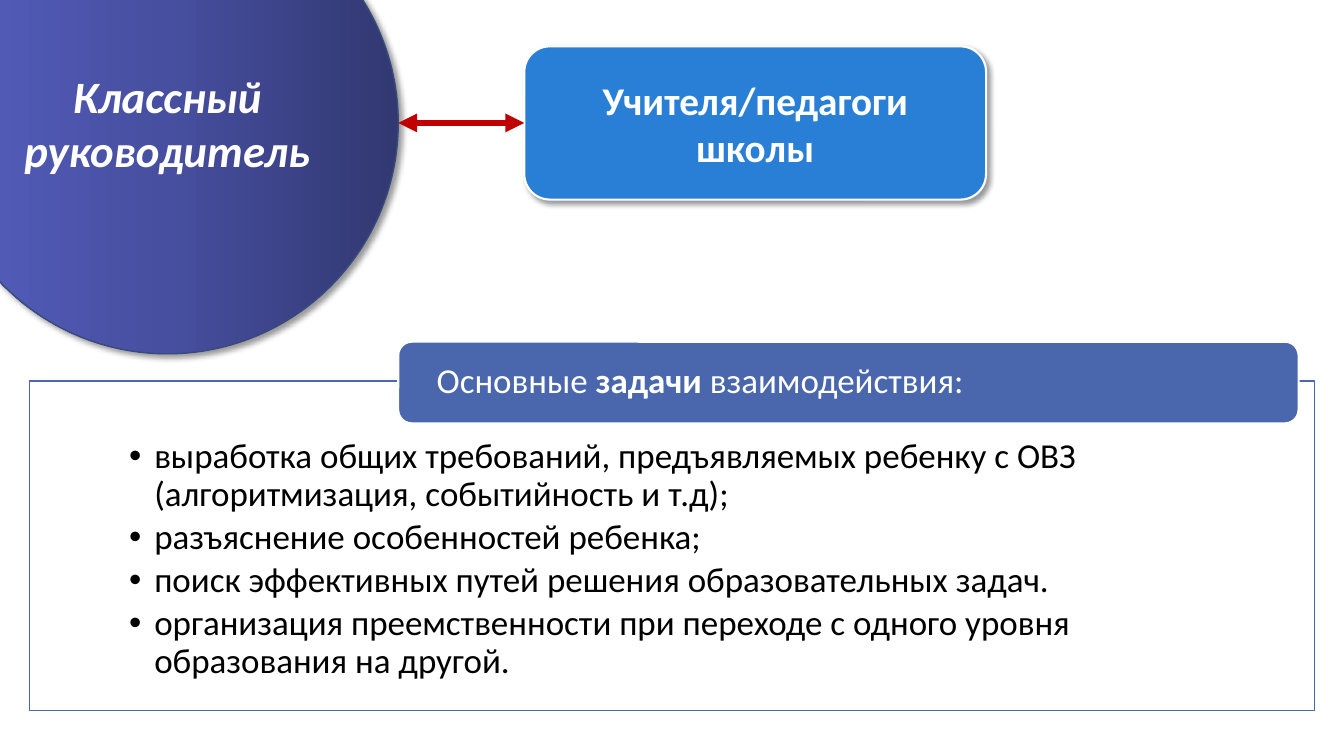
from dataclasses import dataclass

from lxml import etree
from pptx import Presentation
from pptx import util as u
from pptx.dml import color
from pptx.enum import shapes, text
from pptx.oxml import ns

EMU_PER_PX = 9144  # 100 px to the inch
FONT = "Calibri"
WHITE, BLACK, INDIGO, RED = "FFFFFF", "000000", "4A66AC", "C00000"
KINDS = shapes.MSO_SHAPE
ANCHORS = text.MSO_ANCHOR
ALIGN = text.PP_ALIGN


@dataclass
class Box:
    left: int
    top: int
    width: int
    height: int

    def emu(self) -> list[int]:
        return [px(n) for n in (self.left, self.top, self.width, self.height)]


@dataclass
class Panel:
    box: Box
    kind: int
    fill: str
    line: str
    line_pt: float
    label: str = ""
    size: int = 0
    italic: bool = False
    shadow: bool = False


def px(n: int) -> int:
    return n * EMU_PER_PX


def rgb(value: str) -> color.RGBColor:
    return color.RGBColor.from_string(value)


def add_xml(parent, tag: str, **attributes):
    return etree.SubElement(parent, ns.qn(tag), {k: str(v) for k, v in attributes.items()})


def style(font, size: int, value: str, bold: bool = False, italic: bool = False) -> None:
    font.name, font.size, font.bold, font.italic = FONT, u.Pt(size), bold, italic
    font.color.rgb = rgb(value)


def add_panel(slide, panel: Panel):
    shape = slide.shapes.add_shape(panel.kind, *panel.box.emu())
    shape.fill.solid()
    shape.fill.fore_color.rgb = rgb(panel.fill)
    shape.line.color.rgb = rgb(panel.line)
    shape.line.width = u.Pt(panel.line_pt)
    shape.shadow.inherit = False
    if panel.shadow:
        effects = shape.element.spPr.find(ns.qn("a:effectLst"))
        outer = add_xml(effects, "a:outerShdw", blurRad=u.Pt(4), dist=u.Pt(3),
                        dir=45 * 60000, algn="tl", rotWithShape=0)
        add_xml(add_xml(outer, "a:srgbClr", val=BLACK), "a:alpha", val=40000)
    if panel.label:
        frame = shape.text_frame
        frame.text = panel.label
        frame.word_wrap = True
        frame.vertical_anchor = ANCHORS.MIDDLE
        frame.paragraphs[0].alignment = ALIGN.CENTER
        style(frame.paragraphs[0].runs[0].font, panel.size, WHITE, True, panel.italic)
    return shape


def set_gradient(shape, stops: list[tuple[int, str]], angle: int) -> None:
    solid = shape.element.spPr.find(ns.qn("a:solidFill"))
    gradient = etree.Element(ns.qn("a:gradFill"), rotWithShape="1")
    stop_list = add_xml(gradient, "a:gsLst")
    for position, value in stops:
        add_xml(add_xml(stop_list, "a:gs", pos=position * 1000), "a:srgbClr", val=value)
    add_xml(gradient, "a:lin", ang=angle * 60000, scaled=0)
    solid.getparent().replace(solid, gradient)


def add_double_arrow(slide, x1: int, x2: int, y: int) -> None:
    arrow = slide.shapes.add_connector(shapes.MSO_CONNECTOR.STRAIGHT, px(x1), px(y), px(x2), px(y))
    arrow.line.color.rgb = rgb(RED)
    arrow.line.width = u.Pt(4.5)
    for end in ("a:headEnd", "a:tailEnd"):
        add_xml(arrow.line._get_or_add_ln(), end, type="triangle")
    add_xml(arrow.element.spPr, "a:effectLst")


def place_text(placeholder, box: Box, side: int, top: int, bottom: int, anchor):
    """Move a placeholder to the front and set its frame."""
    placeholder.left, placeholder.top, placeholder.width, placeholder.height = box.emu()
    tree = placeholder.element.getparent()
    tree.append(placeholder.element)
    frame = placeholder.text_frame
    frame.margin_left = frame.margin_right = px(side)
    frame.margin_top, frame.margin_bottom = px(top), px(bottom)
    frame.word_wrap = True
    frame.auto_size = text.MSO_AUTO_SIZE.NONE
    frame.vertical_anchor = anchor
    return frame


CIRCLE = Panel(Box(-63, -107, 458, 458), KINDS.OVAL, "474FA0", "374B7F", 1,
               "Классный руководитель", 32, italic=True, shadow=True)
TEACHERS = Panel(Box(520, 46, 458, 152), KINDS.ROUNDED_RECTANGLE, "297FD5", WHITE, 1.5,
                 "Учителя/педагоги школы", 28, shadow=True)
TASK_FRAME = Panel(Box(29, 378, 1275, 327), KINDS.RECTANGLE, WHITE, INDIGO, 1)
BANNER = Panel(Box(395, 339, 893, 81), KINDS.ROUNDED_RECTANGLE, INDIGO, WHITE, 1.5)
HEADING = [("Основные ", False), ("задачи", True), (" взаимодействия:", False)]
TASKS = [
    "выработка общих требований, предъявляемых ребенку с ОВЗ (алгоритмизация, событийность и т.д);",
    "разъяснение особенностей ребенка;",
    "поиск эффективных путей решения образовательных задач.",
    "организация преемственности при переходе с одного уровня образования на другой.",
]


def main() -> None:
    deck = Presentation()
    deck.slide_width, deck.slide_height = px(1333), px(750)
    slide = deck.slides.add_slide(deck.slide_layouts[1])
    heading, tasks = slide.placeholders

    # Class teacher and school teachers
    circle = add_panel(slide, CIRCLE)
    set_gradient(circle, [(0, "323871"), (50, "474FA0"), (100, "555EBE")], 180)
    add_panel(slide, TEACHERS)
    add_double_arrow(slide, 395, 520, 122)

    # List of tasks
    frame_panel = add_panel(slide, TASK_FRAME)
    frame_color = frame_panel.element.spPr.find(ns.qn("a:solidFill"))[0]
    add_xml(frame_color, "a:alpha", val=90000)
    frame = place_text(tasks, TASK_FRAME.box, 99, 57, 19, ANCHORS.TOP)
    frame.text = "\n".join(TASKS)
    for task in frame.paragraphs:
        task.line_spacing = 0.9
        task.space_before, task.space_after = u.Pt(0), u.Pt(3.75)
        properties = task._p.get_or_add_pPr()
        properties.set("marL", str(px(25)))
        properties.set("indent", str(px(-25)))
        add_xml(properties, "a:buChar", char="•")
        style(task.runs[0].font, 25, BLACK)

    # Heading banner
    add_panel(slide, BANNER)
    frame = place_text(heading, Box(399, 343, 885, 73), 34, 0, 0, ANCHORS.MIDDLE)
    line = frame.paragraphs[0]
    line.alignment = ALIGN.LEFT
    line.line_spacing = 0.9
    for words, bold in HEADING:
        run = line.add_run()
        run.text = words
        style(run.font, 25, WHITE, bold)

    deck.save("out.pptx")


if __name__ == "__main__":
    main()
